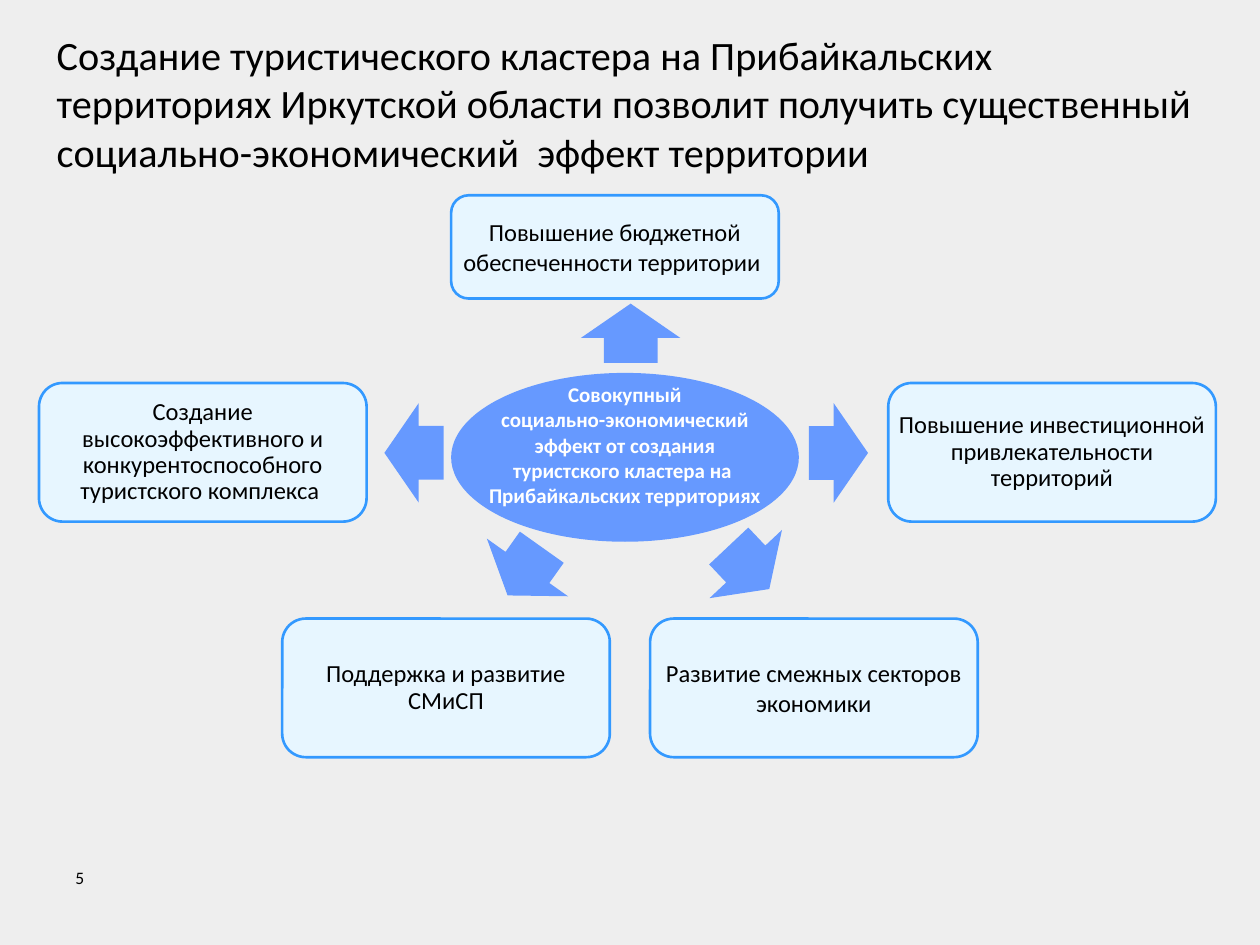
import pptx
import pptx.util
import pptx.dml.color
import pptx.enum.shapes
import pptx.enum.text

Pt = pptx.util.Pt
SHAPES = pptx.enum.shapes.MSO_SHAPE
ALIGN = pptx.enum.text.PP_ALIGN
ANCHOR = pptx.enum.text.MSO_ANCHOR
FONT = "Calibri"

COLORS = {
    "background": "EEEEEE",
    "text": "000000",
    "accent": "6699FF",
    "white": "FFFFFF",
    "effect": "E7F6FF",
    "border": "3399FF",
}

TITLE = (
    "Создание туристического кластера на Прибайкальских территориях "
    "Иркутской области позволит получить существенный "
    "социально-экономический  эффект территории"
)
CENTER = [
    [
        "Совокупный",
        "социально-экономический",
        "эффект от создания",
        "туристского кластера на ",
    ],
    ["Прибайкальских территориях", ""],
]
PAGE_NUMBER = "5"

EFFECT_WIDTH = 187.2
ROW_TOP = 218.9
BOTTOM_TOP = 353.5
TALL = 79.2
EFFECTS = [
    ("Повышение бюджетной обеспеченности территории ", 257.8, 111.6, 59, 1),
    ("Повышение инвестиционной привлекательности территорий", 507.6, ROW_TOP, TALL, 0.9),
    ("Развитие смежных секторов экономики", 371.5, BOTTOM_TOP, TALL, 1),
    ("Поддержка и развитие СМиСП", 161.3, BOTTOM_TOP, TALL, 0.9),
    (
        "Создание высокоэффективного и конкурентоспособного туристского комплекса ",
        22.3, ROW_TOP, TALL, 0.9,
    ),
]

ARROW_SIZE = (56.9, 33.8)
ARROWS = [
    (331.9, 173.5, 180),
    (450.7, 241.9, 270),
    (208.1, 241.9, 90),
    (399.6, 307.4, 316.7),
    (271.4, 309.6, 35.4),
]


def color(name):
    return pptx.dml.color.RGBColor.from_string(COLORS[name])


def write(para, lines, size, tone="text", bold=False):
    para.font.size = Pt(size)
    for index, line in enumerate(lines):
        if index:
            para.add_line_break()
        if line:
            span = para.add_run()
            span.text = line
            span.font.name = FONT
            span.font.size = Pt(size)
            span.font.bold = bold
            span.font.color.rgb = color(tone)


def set_frame(frame, anchor, side=0, edge=0, wrap=True):
    frame.word_wrap = wrap
    frame.auto_size = pptx.enum.text.MSO_AUTO_SIZE.NONE
    frame.vertical_anchor = anchor
    frame.margin_left = frame.margin_right = Pt(side)
    frame.margin_top = frame.margin_bottom = Pt(edge)


def add_figure(page, kind, place, fill, line=None):
    figure = page.shapes.add_shape(kind, *map(Pt, place))
    figure.shadow.inherit = False
    figure.fill.solid()
    figure.fill.fore_color.rgb = color(fill)
    if line:
        figure.line.color.rgb = color(line)
        figure.line.width = Pt(1.5)
    else:
        figure.line.fill.background()
    return figure


def add_title(page):
    title = page.shapes.title
    title.left, title.top, title.width, title.height = map(Pt, (25.2, 15.1, 675.4, 88.6))
    set_frame(title.text_frame, ANCHOR.BOTTOM, 7.2, 3.6)
    para = title.text_frame.paragraphs[0]
    para.alignment = ALIGN.LEFT
    write(para, [TITLE], 23)


def add_page_number(page):
    box = page.shapes.add_textbox(*map(Pt, (36, 491.8, 167.8, 37.4)))
    set_frame(box.text_frame, ANCHOR.TOP, 7.2, 3.6)
    write(box.text_frame.paragraphs[0], [PAGE_NUMBER], 10)


def add_center(page):
    oval = add_figure(page, SHAPES.OVAL, (257.8, 213.1, 198.7, 96.5), "accent")
    frame = oval.text_frame
    set_frame(frame, ANCHOR.MIDDLE, wrap=False)
    for index, lines in enumerate(CENTER):
        para = frame.add_paragraph() if index else frame.paragraphs[0]
        para.alignment = ALIGN.CENTER
        write(para, lines, 12, "white", True)


def add_effect(page, text, left, top, height, spacing):
    place = (left, top, EFFECT_WIDTH, height)
    box = add_figure(page, SHAPES.ROUNDED_RECTANGLE, place, "effect", "border")
    box.adjustments[0] = 0.17
    set_frame(box.text_frame, ANCHOR.MIDDLE, edge=0.7)
    para = box.text_frame.paragraphs[0]
    para.alignment = ALIGN.CENTER
    para.line_spacing = spacing
    write(para, [text], 14)


def add_arrow(page, left, top, angle):
    arrow = add_figure(page, SHAPES.DOWN_ARROW, (left, top, *ARROW_SIZE), "accent")
    arrow.adjustments[0] = 0.54
    arrow.adjustments[1] = 0.58
    arrow.rotation = angle


def main():
    deck = pptx.Presentation()
    deck.slide_width, deck.slide_height = Pt(720), Pt(540)
    page = deck.slides.add_slide(deck.slide_layouts.get_by_name("Title Only"))
    page.background.fill.solid()
    page.background.fill.fore_color.rgb = color("background")
    add_title(page)
    add_page_number(page)
    add_center(page)
    for effect in EFFECTS:
        add_effect(page, *effect)
    for arrow in ARROWS:
        add_arrow(page, *arrow)
    deck.save("out.pptx")


if __name__ == "__main__":
    main()
